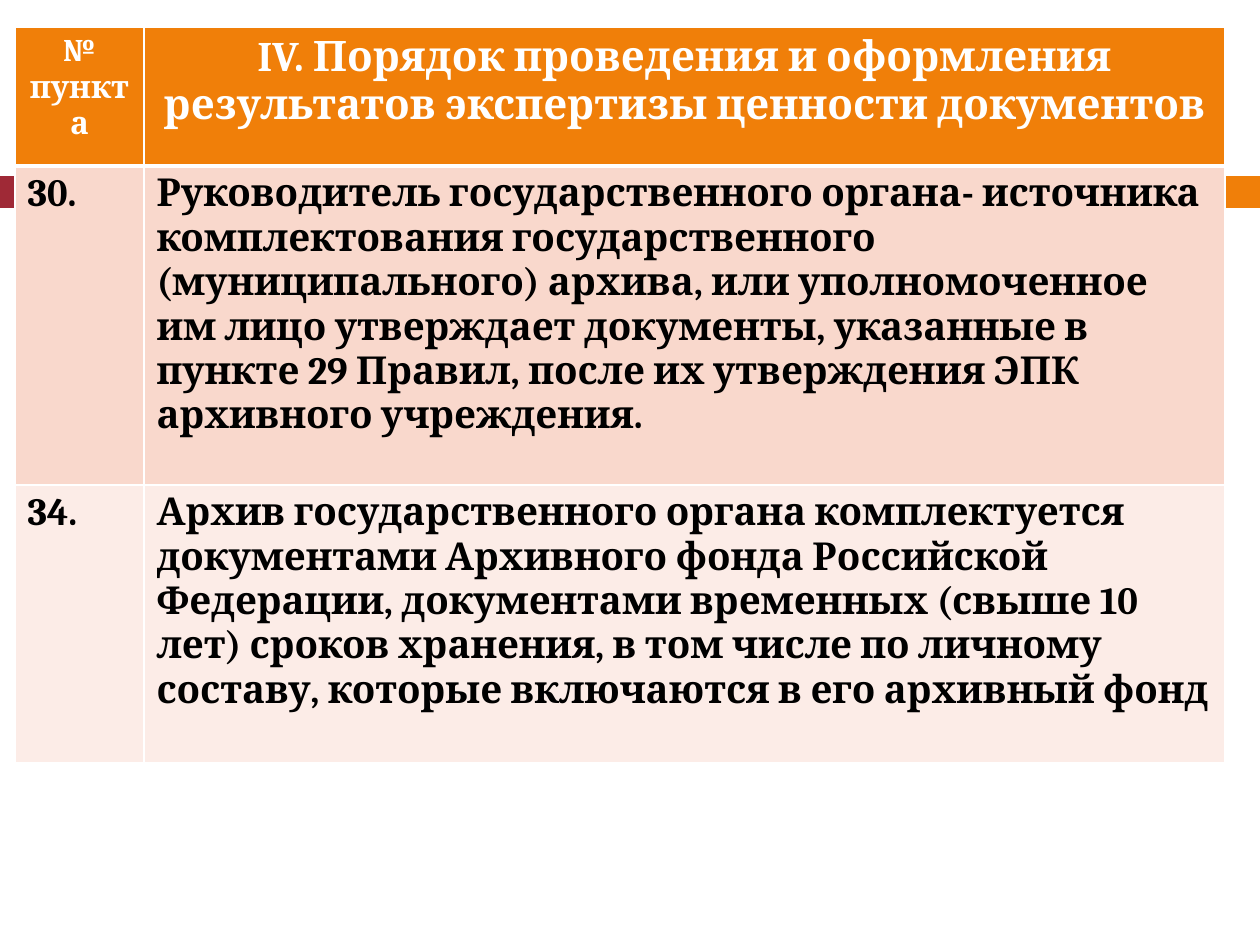
from lxml import etree
from pptx import Presentation
from pptx.dml.color import RGBColor
from pptx.enum.shapes import MSO_SHAPE
from pptx.enum.text import PP_ALIGN
from pptx.oxml.ns import qn
from pptx.util import Emu, Pt

RECTANGLE = MSO_SHAPE.RECTANGLE
CENTER, LEFT = PP_ALIGN.CENTER, PP_ALIGN.LEFT
EMU_PER_PX = 914400 / 126
FONT = "Cambria"
COLORS = {
    "red": "9F2936",
    "orange": "F07F09",
    "white": "FFFFFF",
    "black": "000000",
    "odd_row": "F9D8CC",
    "even_row": "FCECE7",
}
COLUMN_WIDTHS = (129, 1081)
ROW_HEIGHTS = (139, 319, 278)
HEADER_SIZES = (18, 24)
BODY_SIZE = 22
ROWS = [
    ("№ пункта",
     "IV. Порядок проведения и оформления результатов экспертизы ценности документов"),
    ("30.",
     "Руководитель государственного органа- источника комплектования "
     "государственного (муниципального) архива, или уполномоченное им лицо "
     "утверждает документы, указанные в пункте 29 Правил, после их "
     "утверждения ЭПК архивного учреждения."),
    ("34.",
     "Архив государственного органа комплектуется документами Архивного фонда "
     "Российской Федерации, документами временных (свыше 10 лет) сроков "
     "хранения, в том числе по личному составу, которые включаются в его "
     "архивный фонд"),
]


def px(length):
    return Emu(round(length * EMU_PER_PX))


def color(name):
    return RGBColor.from_string(COLORS[name])


def add_band(page, box, split, gap):
    """Draw a short red bar and a long orange bar, parted by a gap."""
    left, top, width, height = box
    bars = ((left, split, "red"),
            (left + split + gap, width - split - gap, "orange"))
    for bar_left, bar_width, fill in bars:
        bar = page.shapes.add_shape(
            RECTANGLE, px(bar_left), px(top), px(bar_width), px(height))
        bar.shadow.inherit = False
        bar.fill.solid()
        bar.fill.fore_color.rgb = color(fill)
        bar.line.fill.background()


def set_borders(cell, widths):
    """Give the cell white borders; must come before its fill."""
    properties = cell._tc.get_or_add_tcPr()
    for side, width in widths.items():
        line = etree.SubElement(properties, qn(f"a:ln{side}"), w=str(Pt(width)))
        fill = etree.SubElement(line, qn("a:solidFill"))
        etree.SubElement(fill, qn("a:srgbClr"), val=COLORS["white"])


def format_cell(cell, text, fill, text_color, size, alignment, borders):
    set_borders(cell, borders)
    cell.fill.solid()
    cell.fill.fore_color.rgb = color(fill)
    cell.text = text
    para = cell.text_frame.paragraphs[0]
    para.alignment = alignment
    para.font.name = FONT
    para.font.size = Pt(size)
    para.font.bold = True
    para.font.color.rgb = color(text_color)


def add_rules_table(page, left, top):
    frame = page.shapes.add_table(
        len(ROWS), len(COLUMN_WIDTHS), px(left), px(top),
        px(sum(COLUMN_WIDTHS)), px(sum(ROW_HEIGHTS)))
    table = frame.table
    for column, width in zip(table.columns, COLUMN_WIDTHS):
        column.width = px(width)
    for index, (row, height, texts) in enumerate(zip(table.rows, ROW_HEIGHTS, ROWS)):
        row.height = px(height)
        borders = {"L": 1, "R": 1,
                   "T": 3 if index == 1 else 1,
                   "B": 3 if index == 0 else 1}
        for cell, text, header_size in zip(row.cells, texts, HEADER_SIZES):
            if index == 0:
                look = ("orange", "white", header_size, CENTER)
            else:
                fill = "odd_row" if index % 2 else "even_row"
                look = (fill, "black", BODY_SIZE, LEFT)
            format_cell(cell, text, *look, borders)


def main():
    deck = Presentation()
    deck.slide_width, deck.slide_height = px(1260), px(945)
    page = deck.slides.add_slide(deck.slide_layouts[6])
    add_band(page, (0, 176, 1260, 32), split=73, gap=9)
    add_rules_table(page, 15, 27)
    deck.save("out.pptx")


if __name__ == "__main__":
    main()
